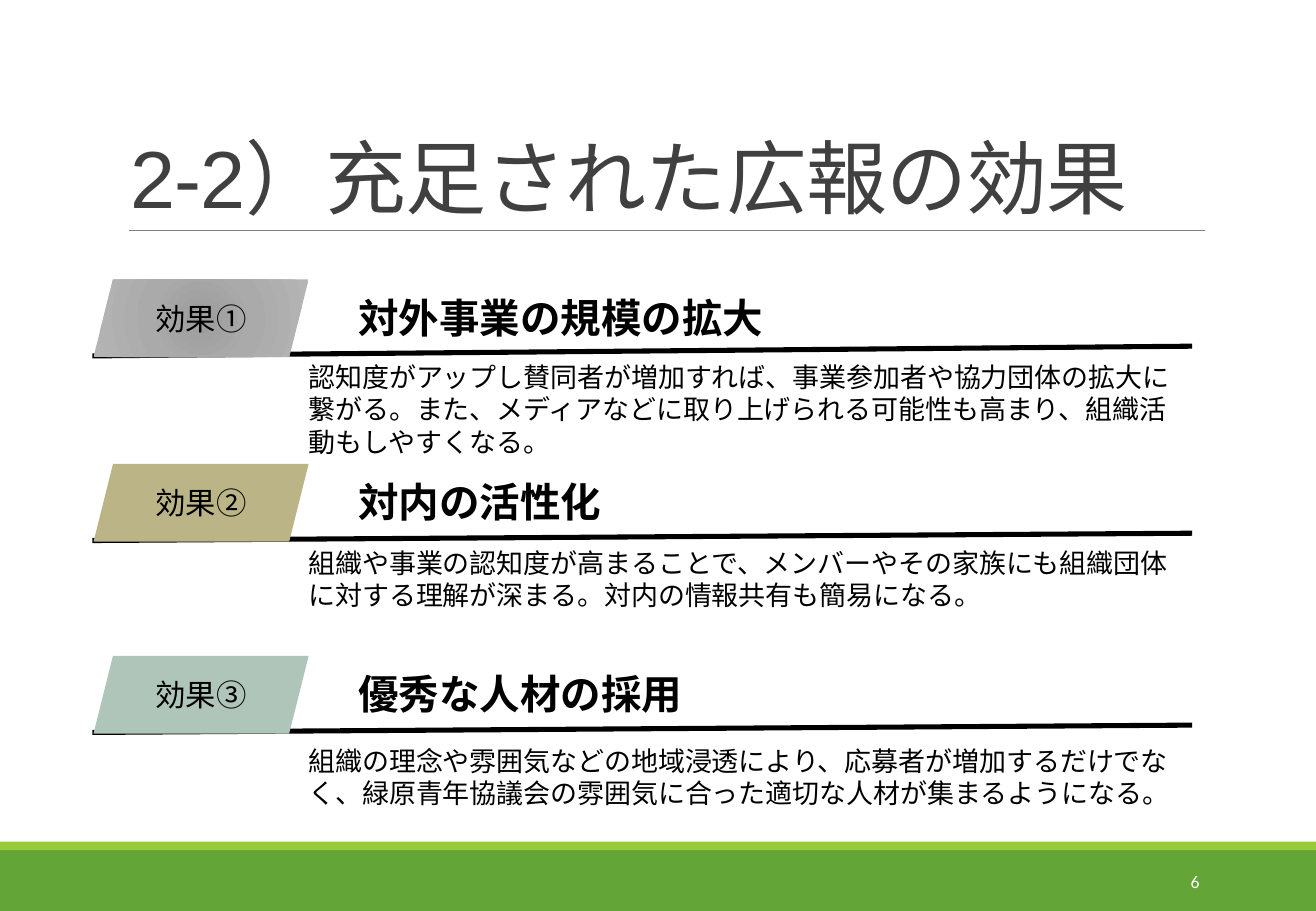
from dataclasses import dataclass

from lxml import etree
from pptx import Presentation
from pptx.dml.color import RGBColor
from pptx.enum.shapes import MSO_CONNECTOR, MSO_SHAPE
from pptx.enum.text import MSO_ANCHOR, PP_ALIGN
from pptx.oxml import parse_xml
from pptx.oxml.ns import nsdecls, qn
from pptx.util import Emu, Pt

RECT, TAG = MSO_SHAPE.RECTANGLE, MSO_SHAPE.PARALLELOGRAM
STRAIGHT = MSO_CONNECTOR.STRAIGHT
TOP, MIDDLE, BOTTOM = MSO_ANCHOR.TOP, MSO_ANCHOR.MIDDLE, MSO_ANCHOR.BOTTOM
LEFT, CENTER, RIGHT = PP_ALIGN.LEFT, PP_ALIGN.CENTER, PP_ALIGN.RIGHT

# Content
TITLE = "2-2）充足された広報の効果"
PAGE = "6"
# label, fill (a list is a radial gradient), heading, description, top, description top, line rise
EFFECTS = [
    ("効果①", [(0, "9C9C9C"), (45, "AAAAAA"), (100, "B4B4B4")], "対外事業の規模の拡大",
     "認知度がアップし賛同者が増加すれば、事業参加者や協力団体の拡大に繋がる。"
     "また、メディアなどに取り上げられる可能性も高まり、組織活動もしやすくなる。", 230, 292, 8),
    ("効果②", "BBB487", "対内の活性化",
     "組織や事業の認知度が高まることで、メンバーやその家族にも組織団体に対する理解が深まる。"
     "対内の情報共有も簡易になる。", 382, 445, 6),
    ("効果③", "AFC5B9", "優秀な人材の採用",
     "組織の理念や雰囲気などの地域浸透により、応募者が増加するだけでなく、"
     "緑原青年協議会の雰囲気に合った適切な人材が集まるようになる。", 540, 608, 6),
]


@dataclass(frozen=True)
class Theme:
    text: str = "000000"
    title: str = "404040"
    rule: str = "808080"
    band: str = "63A537"
    stripe: str = "99CB38"
    page: str = "FFFFFF"
    cjk: str = "Noto Sans CJK JP"
    title_font: str = "Arial"
    page_font: str = "Calibri"
    title_size: float = 48
    heading_size: float = 24
    label_size: float = 18
    body_size: float = 16
    page_size: float = 10.5


T = Theme()
PX = 9144  # 100 px to the inch
W, H = 1083, 750


def px(*lengths):
    return [Emu(n * PX) for n in lengths]


def write(sp, text, size, color=T.text, font=T.cjk, bold=False, align=LEFT, anchor=TOP):
    tf = sp.text_frame
    tf.word_wrap = True
    tf.vertical_anchor = anchor
    p = tf.paragraphs[0]
    p.text = text
    p.alignment = align
    p.font.size = Pt(size)
    p.font.bold = bold
    p.font.name = font
    p.font.color.rgb = RGBColor.from_string(color)
    props = p._p.pPr.find(qn("a:defRPr"))
    etree.SubElement(props, qn("a:ea")).set("typeface", T.cjk)
    return p


def add_text(box, *args, **style):
    return write(slide.shapes.add_textbox(*px(*box)), *args, **style)


def add_filled(kind, box, fill):
    sp = slide.shapes.add_shape(kind, *px(*box))
    sp.shadow.inherit = False
    sp.line.fill.background()
    if isinstance(fill, str):
        sp.fill.solid()
        sp.fill.fore_color.rgb = RGBColor.from_string(fill)
    else:
        stops = "".join(f'<a:gs pos="{pos * 1000}"><a:srgbClr val="{c}"/></a:gs>' for pos, c in fill)
        sp.fill.background()
        none = sp._element.spPr.find(qn("a:noFill"))
        none.getparent().replace(none, parse_xml(
            f'<a:gradFill {nsdecls("a")}><a:gsLst>{stops}</a:gsLst><a:path path="circle">'
            '<a:fillToRect l="100000" t="100000" r="100000" b="100000"/></a:path></a:gradFill>'))
    return sp


def add_line(ends, color, width):
    line = slide.shapes.add_connector(STRAIGHT, *px(*ends))
    line.line.color.rgb = RGBColor.from_string(color)
    line.line.width = Pt(width)
    etree.SubElement(line._element.spPr, qn("a:effectLst"))


prs = Presentation()
prs.slide_width, prs.slide_height = px(W, H)
slide = prs.slides.add_slide(prs.slide_layouts[5])

# Footer bands and title rule
add_filled(RECT, (0, 700, W, 50), T.band)
add_filled(RECT, (0, 693, W, 7), T.stripe)
add_line((106, 190, 992, 190), T.rule, 0.5)

# Title
title = slide.shapes.title
title.left, title.top, title.width, title.height = px(97, 31, 948, 159)
p = write(title, TITLE, T.title_size, T.title, T.title_font, anchor=BOTTOM)
p.line_spacing = 0.85
p._p.pPr.find(qn("a:defRPr")).set("spc", "-50")

# Effects: line, tag, heading and description
for label, fill, heading, description, top, body_top, rise in EFFECTS:
    base = top + 63
    add_line((76, base, 981, base - rise), T.text, 3)
    tag = add_filled(TAG, (77, top, 177, 64), fill)
    write(tag, label, T.label_size, align=CENTER, anchor=MIDDLE)
    add_text((285, top + 6, 458, 50), heading, T.heading_size, bold=True)
    add_text((244, body_top, 738, 64), description, T.body_size)

# Page number
add_text((880, 706, 117, 40), PAGE, T.page_size, T.page, T.page_font, align=RIGHT, anchor=MIDDLE)

prs.save("out.pptx")
